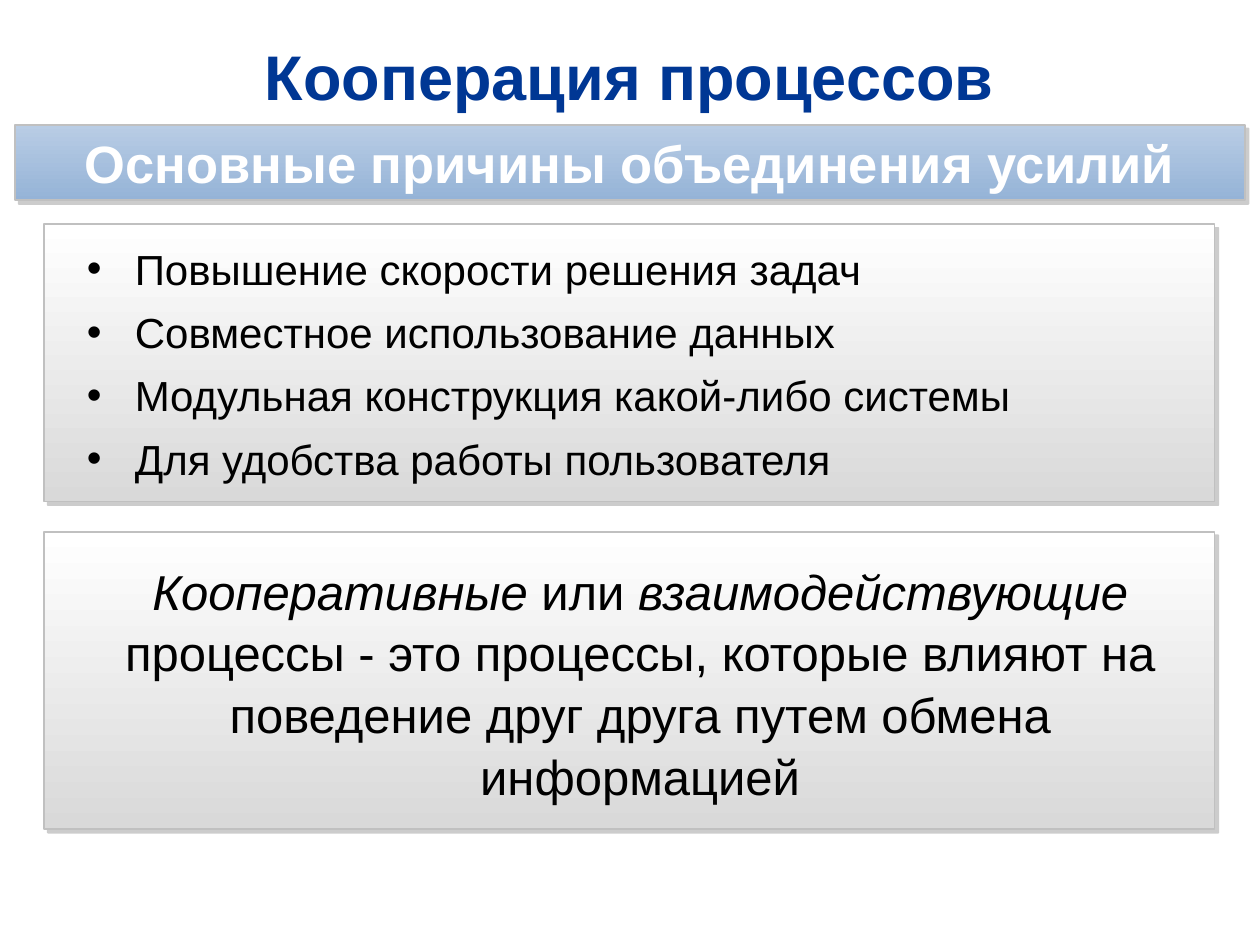
import pptx
import pptx.dml.color
import pptx.enum.shapes
import pptx.enum.text
import pptx.oxml
import pptx.oxml.ns
import pptx.util
from dataclasses import dataclass

Inches, Pt = pptx.util.Inches, pptx.util.Pt
RGB = pptx.dml.color.RGBColor.from_string
CENTER = pptx.enum.text.PP_ALIGN.CENTER
LEFT = pptx.enum.text.PP_ALIGN.LEFT
MIDDLE = pptx.enum.text.MSO_ANCHOR.MIDDLE
TOP = pptx.enum.text.MSO_ANCHOR.TOP
FIXED = pptx.enum.text.MSO_AUTO_SIZE.NONE


@dataclass(frozen=True)
class Theme:
    font: str = "Arial"
    title: str = "003794"
    light: str = "FFFFFF"
    dark: str = "000000"
    border: str = "C0C0C0"
    shadow: str = "808080"
    banner: tuple = ("B9CDE5", "95B3D7")
    panel: tuple = ("FFFFFF", "D9D9D9")
    title_size: int = 36
    banner_size: int = 30
    list_size: int = 24
    definition_size: int = 28
    spacing: float = 1.05


def apply(target, values):
    for name, value in values.items():
        setattr(target, name, value)


class SlideBuilder:
    """Draws styled elements on the current slide."""

    def __init__(self, theme, slide):
        self.theme = theme
        self.slide = slide

    def place(self, item, box):
        apply(item, dict(zip(("left", "top", "width", "height"), map(Inches, box))))

    def add_text(self, paragraph, text, size, color, bold=False, italic=False):
        run = paragraph.add_run()
        run.text = text
        apply(run.font, {"name": self.theme.font, "size": Pt(size), "bold": bold, "italic": italic})
        run.font.color.rgb = RGB(color)

    def frame(self, item, anchor):
        apply(item.text_frame, {"word_wrap": True, "auto_size": FIXED, "vertical_anchor": anchor})
        return item.text_frame

    def title(self, box, text):
        heading = self.slide.shapes.title
        self.place(heading, box)
        paragraph = self.frame(heading, MIDDLE).paragraphs[0]
        paragraph.alignment = CENTER
        self.add_text(paragraph, text, self.theme.title_size, self.theme.title, bold=True)

    def panel(self, box, colors):
        panel = self.slide.shapes.add_shape(
            pptx.enum.shapes.MSO_SHAPE.RECTANGLE, *map(Inches, box))
        panel.fill.gradient()
        panel.fill.gradient_angle = 270
        for stop, color in zip(panel.fill.gradient_stops, colors):
            stop.color.rgb = RGB(color)
        panel.line.color.rgb = RGB(self.theme.border)
        panel.line.width = Pt(1)
        panel.shadow.inherit = False
        effects = panel._element.spPr.find(pptx.oxml.ns.qn("a:effectLst"))
        effects.append(pptx.oxml.parse_xml(
            f'<a:outerShdw {pptx.oxml.ns.nsdecls("a")} blurRad="0" dist="{Pt(3)}" '
            'dir="2700000" algn="ctr" rotWithShape="0">'
            f'<a:srgbClr val="{self.theme.shadow}"><a:alpha val="40000"/></a:srgbClr>'
            '</a:outerShdw>'))
        self.slide.shapes._spTree.insert(2, panel._element)
        return panel

    def banner(self, box, text):
        frame = self.frame(self.panel(box, self.theme.banner), MIDDLE)
        apply(frame, {"margin_left": Inches(0.24), "margin_right": Inches(0.24),
                      "margin_top": Inches(0.04), "margin_bottom": Inches(0.04)})
        paragraph = frame.paragraphs[0]
        paragraph.alignment = CENTER
        self.add_text(paragraph, text, self.theme.banner_size, self.theme.light, bold=True)

    def bullets(self, box, reasons):
        body = self.slide.placeholders[1]
        self.place(body, box)
        frame = self.frame(body, TOP)
        for index, reason in enumerate(reasons):
            paragraph = frame.add_paragraph() if index else frame.paragraphs[0]
            apply(paragraph, {"alignment": LEFT, "line_spacing": self.theme.spacing,
                              "space_before": Pt(6 if index else 0)})
            properties = paragraph._p.get_or_add_pPr()
            properties.set("marL", str(Inches(0.38)))
            properties.set("indent", str(-Inches(0.38)))
            self.add_text(paragraph, reason, self.theme.list_size, self.theme.dark)

    def definition(self, box, parts):
        paragraph = self.frame(self.slide.shapes.add_textbox(*map(Inches, box)), TOP).paragraphs[0]
        apply(paragraph, {"alignment": CENTER, "line_spacing": self.theme.spacing})
        for text, italic in parts:
            self.add_text(paragraph, text, self.theme.definition_size, self.theme.dark, italic=italic)


def main():
    deck = pptx.Presentation()
    apply(deck, {"slide_width": Inches(10), "slide_height": Inches(7.5)})
    theme = Theme()
    builder = SlideBuilder(theme, deck.slides.add_slide(deck.slide_layouts[1]))

    builder.title((0.35, 0.26, 9.29, 0.68), "Кооперация процессов")
    builder.banner((0.12, 0.99, 9.76, 0.6), "Основные причины объединения усилий")
    for top, height in ((1.78, 2.2), (4.22, 2.36)):
        builder.panel((0.35, top, 9.29, height), theme.panel)
    builder.bullets((0.59, 1.86, 8.74, 1.97), (
        "Повышение скорости решения задач",
        "Совместное использование данных",
        "Модульная конструкция какой-либо системы",
        "Для удобства работы пользователя",
    ))
    builder.definition((0.59, 4.38, 8.98, 1.99), (
        ("Кооперативные", True),
        (" или ", False),
        ("взаимодействующие", True),
        (" процессы - это процессы, которые влияют на поведение друг друга "
         "путем обмена информацией", False),
    ))
    deck.save("out.pptx")


if __name__ == "__main__":
    main()
